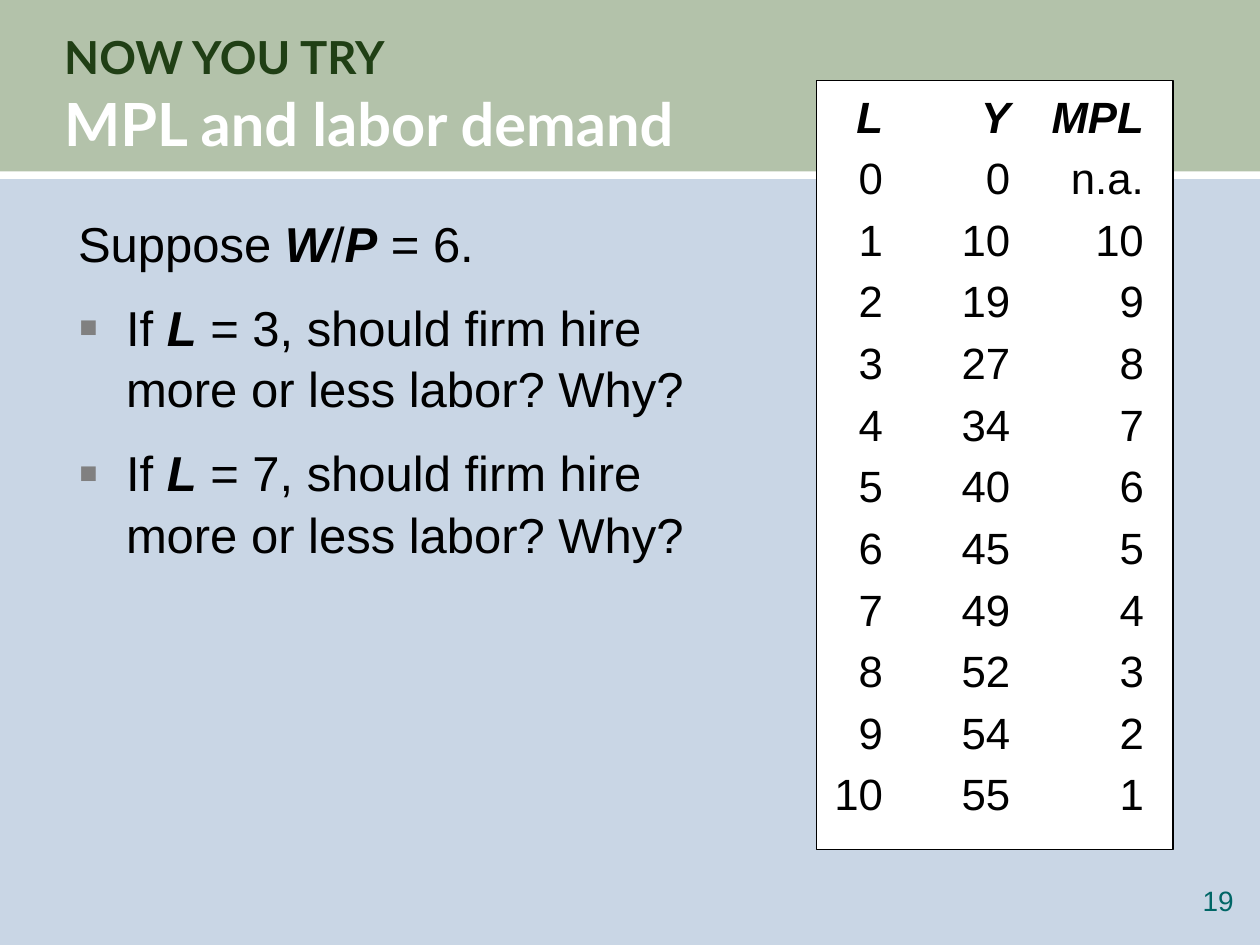
"""Build the slide on the marginal product of labor and labor demand."""
import pptx
import pptx.dml.color
import pptx.enum.shapes
import pptx.enum.text
import pptx.oxml
import pptx.util

inch = pptx.util.Inches
text = pptx.enum.text
NS = 'xmlns:a="http://schemas.openxmlformats.org/drawingml/2006/main"'


def paint(target, tone):
    if hasattr(target, "solid"):
        target.solid()
        target = target.fore_color
    else:
        target = target.color
    target.rgb = pptx.dml.color.RGBColor.from_string(tone)


def write(para, words, size, tone, name="Arial", lead=1.05, gap=0):
    """Write words in a paragraph; parts between asterisks are bold italic."""
    para.line_spacing = lead
    para.space_before = pptx.util.Pt(size * gap)
    for i, part in enumerate(words.split("*")):
        if part:
            run = para.add_run()
            run.text = part
            run.font.name, run.font.size = name, pptx.util.Pt(size)
            run.font.bold = run.font.italic = i % 2 == 1
            paint(run.font, tone)


deck = pptx.Presentation()
deck.slide_width, deck.slide_height = inch(10), inch(7.5)
slide = deck.slides.add_slide(deck.slide_layouts[1])
paint(slide.background.fill, "C9D6E5")
title, body = slide.placeholders
tree = slide.shapes
rect = pptx.enum.shapes.MSO_SHAPE.RECTANGLE

panes = []
for box, tone in [
    ((0, -0.01, 10, 1.41), "B3C2AA"),
    ((0, 1.36, 10, 0.06), "FFFFFF"),
    ((6.48, 0.64, 2.83, 6.1), "FFFFFF"),
]:
    pane = tree.add_shape(rect, *map(inch, box))
    pane.shadow.inherit = False
    paint(pane.fill, tone)
    pane.line.fill.background()
    panes.append(pane)
band, rule, card = panes
title.element.addprevious(band.element)
body.element.addprevious(rule.element)

page = tree.add_textbox(*map(inch, (9.24, 7.01, 0.55, 0.32)))
for item, box in [
    (title, (0.51, 0.22, 9.02, 1.03)),
    (body, (0.52, 1.62, 5.62, 5.08)),
]:
    item.left, item.top, item.width, item.height = map(inch, box)
for item in (title, page):
    frame = item.text_frame
    frame.margin_left = frame.margin_right = 0
    frame.margin_top = frame.margin_bottom = 0
for item in (title, body, page, card):
    item.text_frame.word_wrap = True
    item.text_frame.auto_size = text.MSO_AUTO_SIZE.NONE

title.text_frame.vertical_anchor = text.MSO_ANCHOR.MIDDLE
head = title.text_frame.paragraphs[0]
head.alignment = text.PP_ALIGN.LEFT
write(head, "NOW YOU TRY", 26, "203F15", "Lato")
head.add_line_break()
write(head, "MPL and labor demand", 34, "FFFFFF", "Lato")
for run in head.runs:
    run.font.bold = True

page.text_frame.paragraphs[0].alignment = text.PP_ALIGN.RIGHT
write(page.text_frame.paragraphs[0], "19", 16, "006666", lead=1)

ask = "If *L* = {}, should firm hire more or less labor? Why?"
lines = ["Suppose *W*/*P* = 6.", ask.format(3), ask.format(7)]
for i, line in enumerate(lines):
    para = body.text_frame.paragraphs[0] if i == 0 else body.text_frame.add_paragraph()
    write(para, line, 28, "000000", gap=0.45)
    props = para._p.get_or_add_pPr()
    dent = inch(0.38) if i else 0
    props.set("marL", str(dent))
    props.set("indent", str(-dent))
    marks = [
        f'<a:buClr {NS}><a:srgbClr val="808080"/></a:buClr>',
        f'<a:buSzPct {NS} val="120000"/>',
        f'<a:buFont {NS} typeface="Arial"/>',
        f'<a:buChar {NS} char="▪"/>',
    ] if i else [f"<a:buNone {NS}/>"]
    for mark in marks:
        props.append(pptx.oxml.parse_xml(mark))

paint(card.line, "000000")
card.line.width = pptx.util.Pt(0.75)
card.text_frame.vertical_anchor = text.MSO_ANCHOR.TOP
rows = ["*\tL\tY\tMPL*", "\t0\t0\tn.a."]
total = 0
for labor in range(1, 11):
    gain = 11 - labor
    total += gain
    rows.append(f"\t{labor}\t{total}\t{gain}")
stops = "".join(f'<a:tab pos="{inch(x)}" algn="r"/>' for x in (0.43, 1.44, 2.5))
for i, row in enumerate(rows):
    para = card.text_frame.paragraphs[0] if i == 0 else card.text_frame.add_paragraph()
    para.alignment = text.PP_ALIGN.LEFT
    write(para, row, 25, "000000", gap=0.15)
    tabs = pptx.oxml.parse_xml(f"<a:tabLst {NS}>{stops}</a:tabLst>")
    para._p.get_or_add_pPr().append(tabs)

deck.save("out.pptx")
